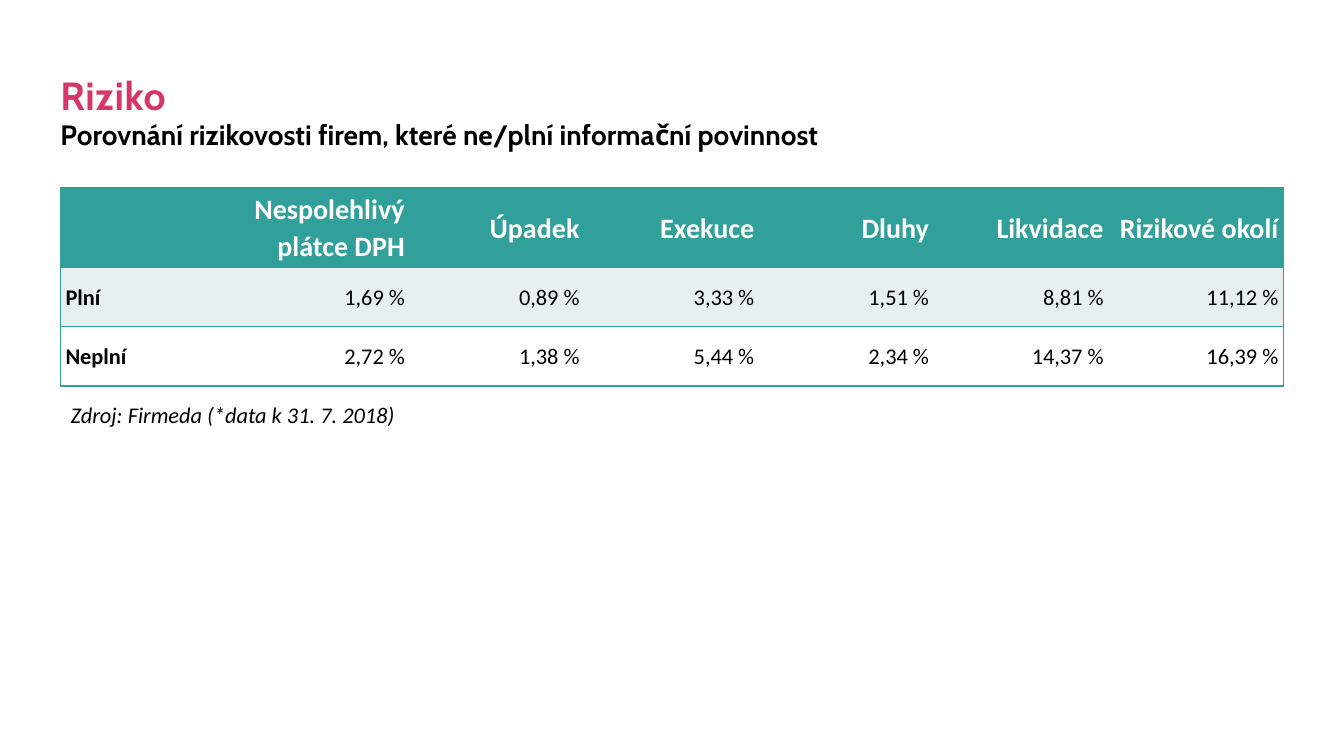
from lxml.etree import SubElement
from pptx import Presentation
from pptx.dml.color import RGBColor
from pptx.enum.text import MSO_ANCHOR as Anchor, PP_ALIGN as Align
from pptx.oxml.ns import qn
from pptx.util import Inches, Pt

WIDTH, HEIGHT = 13.33, 7.5
LEFT, CONTENT_WIDTH = 0.6, 12.13
TEAL, PALE, WHITE, BLACK, PINK = "32A09A", "E8F0EF", "FFFFFF", "000000", "D63768"
HEADER_HEIGHT, ROW_HEIGHT = 0.79, 0.59
RISKS = [
    ["", "Nespolehlivý plátce DPH", "Úpadek", "Exekuce", "Dluhy", "Likvidace", "Rizikové okolí"],
    ["Plní", "1,69 %", "0,89 %", "3,33 %", "1,51 %", "8,81 %", "11,12 %"],
    ["Neplní", "2,72 %", "1,38 %", "5,44 %", "2,34 %", "14,37 %", "16,39 %"],
]
SOURCE_NOTE = "Zdroj: Firmeda (*data k 31. 7. 2018)"


def color(value):
    """Turn a hex string into a colour."""
    return RGBColor.from_string(value)


def write(frame, text, size=16, font="Calibri", ink=BLACK, bold=False, italic=False,
          align=Align.LEFT, line=1.0, tracking=0):
    """Write one formatted paragraph into a text frame."""
    para = frame.paragraphs[0]
    para.alignment, para.line_spacing = align, line
    span = para.add_run()
    span.text = text
    span.font.name, span.font.size = font, Pt(size)
    span.font.bold, span.font.italic = bold, italic
    span.font.color.rgb = color(ink)
    if tracking:
        span.font._element.set("spc", str(tracking))


def add_heading(page, text, top, height, anchor=Anchor.TOP, top_inset=0, **style):
    """Add a heading line across the content width."""
    box = page.shapes.add_textbox(Inches(LEFT), Inches(top), Inches(CONTENT_WIDTH), Inches(height))
    frame = box.text_frame
    frame.word_wrap, frame.vertical_anchor = True, anchor
    frame.margin_left = frame.margin_right = frame.margin_bottom = 0
    frame.margin_top = Inches(top_inset)
    write(frame, text, font="Cabin", bold=True, line=0.9, **style)


def set_borders(cell, sides):
    """Draw teal borders on the named sides and clear the others."""
    properties = cell._tc.get_or_add_tcPr()
    for side in "LRTB":
        edge = SubElement(properties, qn(f"a:ln{side}"), w=str(Pt(1)))
        if side in sides:
            fill = SubElement(edge, qn("a:solidFill"))
            SubElement(fill, qn("a:srgbClr"), val=TEAL)
        else:
            SubElement(edge, qn("a:noFill"))


def fill_cell(cell, text, fill, **style):
    """Fill a data cell and write its text with narrow margins."""
    cell.fill.solid()
    cell.fill.fore_color.rgb = color(fill)
    cell.vertical_anchor = Anchor.MIDDLE
    cell.margin_left = cell.margin_right = Inches(0.05)
    cell.margin_top = cell.margin_bottom = 0
    if text:
        write(cell.text_frame, text, line=1.07, **style)


def add_risk_table(page, top):
    """Add the risk table with a merged source row below it."""
    columns, rows = len(RISKS[0]), len(RISKS) + 1
    height = HEADER_HEIGHT + ROW_HEIGHT * (rows - 1)
    table = page.shapes.add_table(rows, columns, Inches(LEFT), Inches(top),
                                  Inches(CONTENT_WIDTH), Inches(height)).table
    table.first_row = table.horz_banding = False
    for index, row in enumerate(table.rows):
        row.height = Inches(ROW_HEIGHT if index else HEADER_HEIGHT)
    for row, (texts, fill) in enumerate(zip(RISKS, (TEAL, PALE, WHITE))):
        header = row == 0
        for column, text in enumerate(texts):
            cell = table.cell(row, column)
            first, last = column == 0, column == columns - 1
            set_borders(cell, "TB" + "L" * first + "R" * last)
            fill_cell(cell, text, fill, size=20 if header else 16,
                      ink=WHITE if header else BLACK, bold=header or first,
                      align=Align.LEFT if first else Align.RIGHT)
    for column in range(columns):
        cell = table.cell(rows - 1, column)
        set_borders(cell, "T")
        cell.fill.background()
    note = table.cell(rows - 1, 0)
    note.merge(table.cell(rows - 1, columns - 1))
    note.vertical_anchor = Anchor.MIDDLE
    write(note.text_frame, SOURCE_NOTE, italic=True)


def main():
    """Build and save the slide."""
    deck = Presentation()
    deck.slide_width, deck.slide_height = Inches(WIDTH), Inches(HEIGHT)
    page = deck.slides.add_slide(deck.slide_layouts[6])
    add_risk_table(page, 1.86)
    add_heading(page, "Riziko", 0.76, 0.42, anchor=Anchor.BOTTOM, size=28, ink=PINK, tracking=50)
    add_heading(page, "Porovnání rizikovosti firem, které ne/plní informační povinnost",
                1.18, 0.31, top_inset=0.02, size=20)
    deck.save("out.pptx")


if __name__ == "__main__":
    main()
